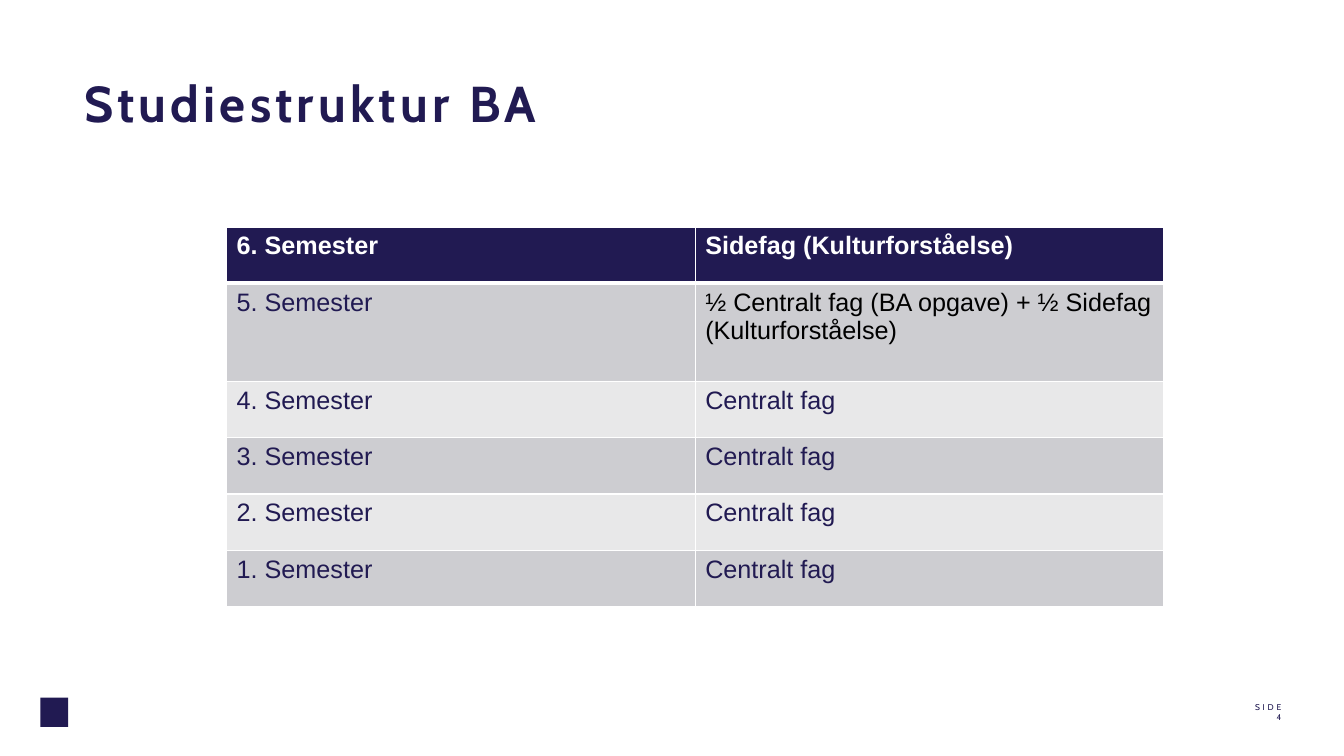
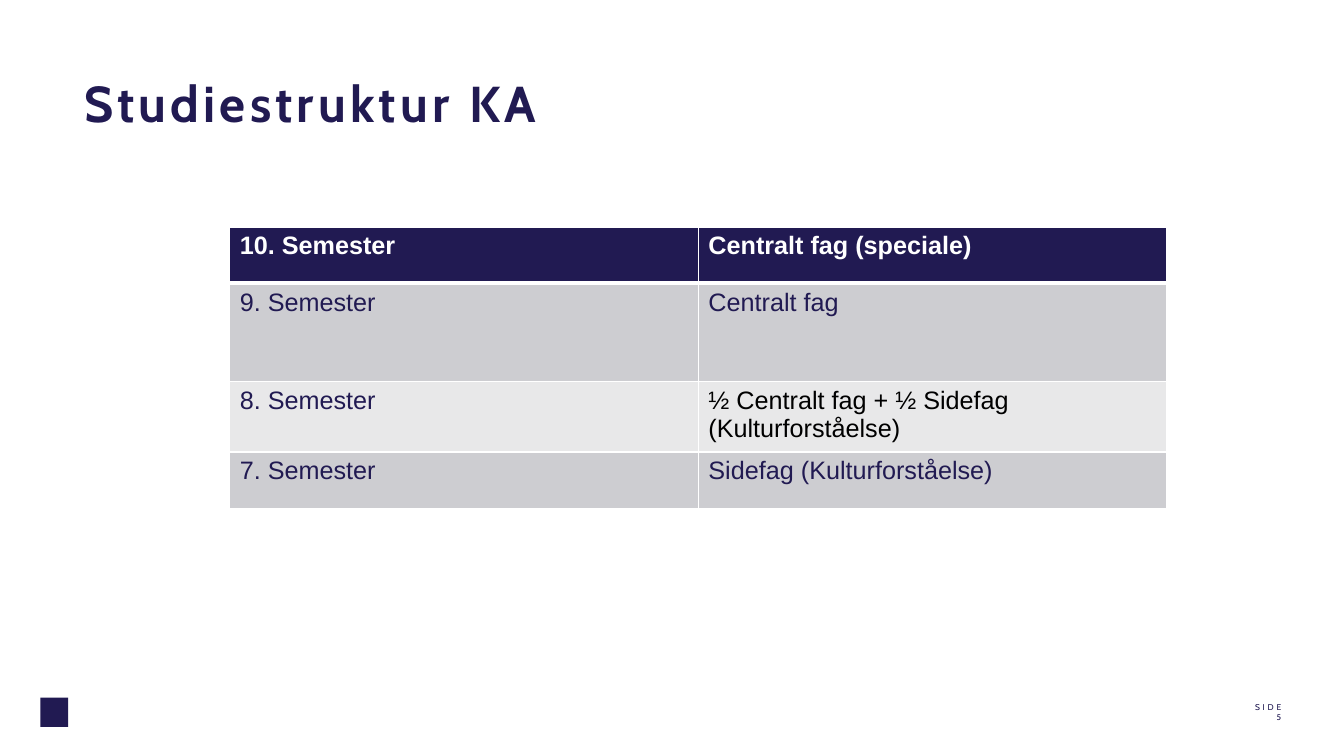
from lxml.etree import SubElement
from pptx import Presentation
from pptx.dml.color import RGBColor
from pptx.enum.shapes import MSO_SHAPE
from pptx.enum.text import MSO_ANCHOR, MSO_AUTO_SIZE, PP_ALIGN
from pptx.oxml.ns import qn
from pptx.util import Cm, Pt

NAVY = RGBColor(0x21, 0x1A, 0x52)
WHITE = RGBColor(0xFF, 0xFF, 0xFF)
BLACK = RGBColor(0x00, 0x00, 0x00)
BANDS = (RGBColor(0xCD, 0xCD, 0xD1), RGBColor(0xE8, 0xE8, 0xE9))

HEADING_FONT, TABLE_FONT = "Cabin", "Arial"
TABLE_TOP, COLUMN_WIDTH = Cm(5.72), Cm(11.81)
ROW_HEIGHT, TALL_ROW_HEIGHT = Cm(1.42), Cm(2.47)
TALL_ROW = 1

PROGRAMMES = [
    {
        "title": "Studiestruktur BA",
        "page": 4,
        "table_left": Cm(5.71),
        "semesters": [
            ("6. Semester", "Sidefag (Kulturforståelse)"),
            ("5. Semester", "½ Centralt fag (BA opgave) + ½ Sidefag (Kulturforståelse)"),
            ("4. Semester", "Centralt fag"),
            ("3. Semester", "Centralt fag"),
            ("2. Semester", "Centralt fag"),
            ("1. Semester", "Centralt fag"),
        ],
    },
    {
        "title": "Studiestruktur KA",
        "page": 5,
        "table_left": Cm(5.79),
        "semesters": [
            ("10. Semester", "Centralt fag (speciale)"),
            ("9. Semester", "Centralt fag"),
            ("8. Semester", "½ Centralt fag + ½ Sidefag (Kulturforståelse)"),
            ("7. Semester", "Sidefag (Kulturforståelse)"),
        ],
    },
]


def add_run(paragraph, text, font_name, size, color, bold=False, spacing=0):
    """Add a formatted run; spacing is the letter spacing in points."""
    run = paragraph.add_run()
    run.text = text
    run.font.name = font_name
    run.font.size = Pt(size)
    run.font.bold = bold
    run.font.color.rgb = color
    if spacing:
        run.font._element.set("spc", str(round(spacing * 100)))


def place_layout_title(layout):
    title = layout.placeholders[0]
    title.left, title.top = Cm(2.13), Cm(1.81)
    title.width, title.height = Cm(15.09), Cm(3.89)
    frame = title.text_frame
    frame.margin_left = frame.margin_top = 0
    frame.margin_right, frame.margin_bottom = Cm(0.25), Cm(0.13)
    frame.vertical_anchor = MSO_ANCHOR.TOP
    frame.auto_size = MSO_AUTO_SIZE.NONE


def add_title(slide, text):
    heading = slide.shapes.title.text_frame.paragraphs[0]
    heading.alignment = PP_ALIGN.LEFT
    add_run(heading, text, HEADING_FONT, 36, NAVY, bold=True, spacing=3)


def add_footer(slide, page):
    block = slide.shapes.add_shape(MSO_SHAPE.RECTANGLE, Cm(1.02), Cm(17.58), Cm(0.7), Cm(0.74))
    block.shadow.inherit = False
    block.fill.solid()
    block.fill.fore_color.rgb = NAVY
    block.line.fill.background()

    page_label = slide.shapes.add_textbox(Cm(28.35), Cm(17.68), Cm(3.94), Cm(0.79))
    frame = page_label.text_frame
    frame.word_wrap = True
    frame.margin_left = frame.margin_top = frame.margin_right = frame.margin_bottom = 0
    for i, line in enumerate(("SIDE", str(page))):
        paragraph = frame.add_paragraph() if i else frame.paragraphs[0]
        paragraph.alignment = PP_ALIGN.RIGHT
        add_run(paragraph, line, HEADING_FONT, 6, NAVY, spacing=2)


def set_borders(cell, row):
    """Draw thin white borders, with a thick one below the header row."""
    widths = {"L": 1, "R": 1, "T": 3 if row == 1 else 1, "B": 3 if row == 0 else 1}
    properties = cell._tc.get_or_add_tcPr()
    for side, width in widths.items():
        line = SubElement(properties, qn(f"a:ln{side}"), w=str(Pt(width)))
        fill = SubElement(line, qn("a:solidFill"))
        SubElement(fill, qn("a:srgbClr"), val=str(WHITE))


def add_semester_table(slide, left, semesters):
    heights = [TALL_ROW_HEIGHT if i == TALL_ROW else ROW_HEIGHT for i in range(len(semesters))]
    table = slide.shapes.add_table(
        len(semesters), 2, left, TABLE_TOP, 2 * COLUMN_WIDTH, sum(heights)
    ).table
    for column in table.columns:
        column.width = COLUMN_WIDTH
    for i, (texts, height) in enumerate(zip(semesters, heights)):
        table.rows[i].height = height
        is_header = i == 0
        for j, text in enumerate(texts):
            cell = table.cell(i, j)
            set_borders(cell, i)
            cell.fill.solid()
            cell.fill.fore_color.rgb = NAVY if is_header else BANDS[(i - 1) % 2]
            is_shared = text.startswith("½")
            color = WHITE if is_header else BLACK if is_shared else NAVY
            add_run(cell.text_frame.paragraphs[0], text, TABLE_FONT, 18, color, bold=is_header)


def main():
    presentation = Presentation()
    presentation.slide_width, presentation.slide_height = Cm(33.87), Cm(19.05)
    title_only = presentation.slide_layouts[5]
    place_layout_title(title_only)
    for programme in PROGRAMMES:
        slide = presentation.slides.add_slide(title_only)
        add_footer(slide, programme["page"])
        add_title(slide, programme["title"])
        add_semester_table(slide, programme["table_left"], programme["semesters"])
    presentation.save("out.pptx")


if __name__ == "__main__":
    main()
